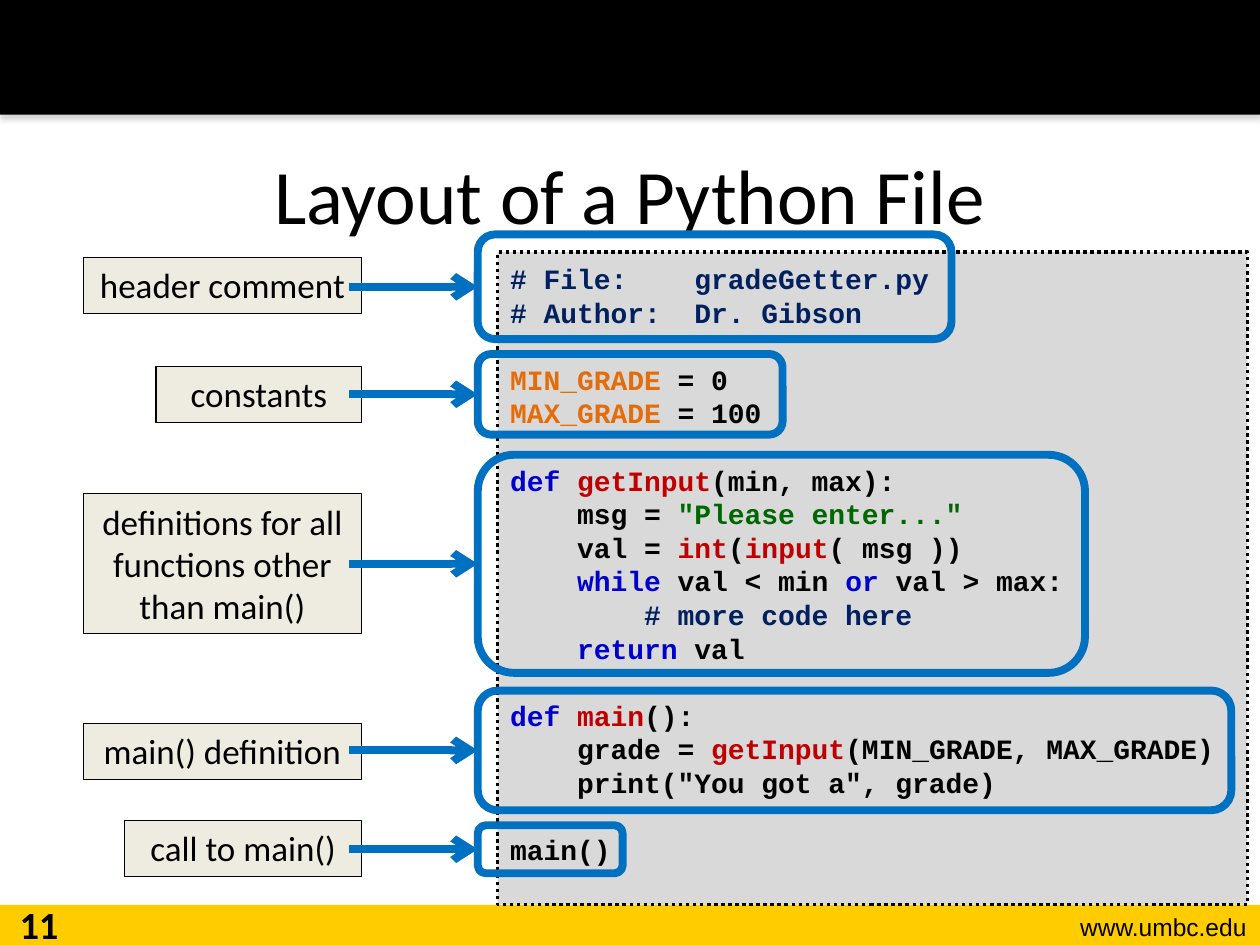
from lxml import etree
from pptx import Presentation
from pptx import util as u
from pptx.dml.color import RGBColor
from pptx.enum import dml, shapes, text
from pptx.oxml import ns

BLACK, NAVY, ORANGE = "000000", "002060", "E46C0A"
KEYWORD, CALL, STRING = "0000CC", "C00000", "006600"
ACCENT, LABEL_FILL = "0070C0", "EEECE1"
CODE_PITCH = 19.2

CODE = [
    [
        [("# File:    gradeGetter.py", NAVY)],
        [("# Author:  Dr. Gibson", NAVY)],
    ],
    [
        [("MIN_GRADE ", ORANGE), ("= 0", BLACK)],
        [("MAX_GRADE ", ORANGE), ("= 100", BLACK)],
    ],
    [
        [("def ", KEYWORD), ("getInput", CALL), ("(min, max):", BLACK)],
        [("    msg = ", BLACK), ('"Please enter..."', STRING)],
        [("    val = ", BLACK), ("int", CALL), ("(", BLACK),
         ("input", CALL), ("( msg ))", BLACK)],
        [("    while ", KEYWORD), ("val < min ", BLACK),
         ("or ", KEYWORD), ("val > max:", BLACK)],
        [("        # more code here", NAVY)],
        [("    return ", KEYWORD), ("val", BLACK)],
    ],
    [
        [("def ", KEYWORD), ("main", CALL), ("():", BLACK)],
        [("    grade = ", BLACK), ("getInput", CALL),
         ("(MIN_GRADE, MAX_GRADE)", BLACK)],
        [('    print("You got a", grade)', BLACK)],
    ],
    [
        [("main()", BLACK)],
    ],
]

SECTIONS = [
    ("header comment", (147, 159, 32), (134, 270.7, 59.8)),
    ("constants", (209.5, 117.4, 32), (202.3, 174.2, 46.1)),
    ("definitions for all functions other than main()",
     (282.2, 159, 80), (259.9, 347, 124.6)),
    ("main() definition", (413.3, 159, 32), (394.6, 430.6, 68.4)),
    ("call to main()", (468.7, 135.4, 32), (471.6, 82.8, 27.4)),
]
FRAME_LEFT, LABEL_RIGHT, ARROW_START = 273, 206.6, 199.5


def rgb(value):
    return RGBColor.from_string(value)


def apply(target, values):
    for name, value in values.items():
        setattr(target, name, value)


class SlideBuilder:
    title_font = {"name": "Calibri", "size": u.Pt(44)}
    label_font = {"name": "Calibri", "size": u.Pt(20)}
    number_font = {"name": "Calibri", "size": u.Pt(22), "bold": True}
    footer_font = {"name": "Arial", "size": u.Pt(14)}
    code_font = {"name": "Courier New", "size": u.Pt(16), "bold": True}

    def __init__(self, slide):
        self.slide = slide

    def add_words(self, paragraph, words, font, color=BLACK):
        run = paragraph.add_run()
        run.text = words
        apply(run.font, font)
        run.font.color.rgb = rgb(color)

    def title(self, words, box):
        title = self.slide.shapes.title
        apply(title, dict(zip(("left", "top", "width", "height"), map(u.Pt, box))))
        title.text_frame.vertical_anchor = text.MSO_ANCHOR.MIDDLE
        paragraph = title.text_frame.paragraphs[0]
        paragraph.alignment = text.PP_ALIGN.CENTER
        self.add_words(paragraph, words, self.title_font)

    def shape(self, box, fill=None, line=None, width=0.75, rounded=False):
        kind = shapes.MSO_SHAPE.ROUNDED_RECTANGLE if rounded else shapes.MSO_SHAPE.RECTANGLE
        shape = self.slide.shapes.add_shape(kind, *map(u.Pt, box))
        shape.shadow.inherit = False
        if fill:
            shape.fill.solid()
            shape.fill.fore_color.rgb = rgb(fill)
        else:
            shape.fill.background()
        if line:
            shape.line.color.rgb = rgb(line)
            shape.line.width = u.Pt(width)
        else:
            shape.line.fill.background()
        return shape

    def banner(self, box):
        banner = self.shape(box, BLACK)
        effects = banner._element.spPr.find(ns.qn("a:effectLst"))
        shadow = etree.SubElement(
            effects, ns.qn("a:outerShdw"), blurRad=str(u.Pt(3.1)),
            dist=str(u.Pt(1.8)), dir="5400000", rotWithShape="0")
        color = etree.SubElement(shadow, ns.qn("a:srgbClr"), val="808080")
        etree.SubElement(color, ns.qn("a:alpha"), val="35000")

    def textbox(self, words, box, font, alignment):
        frame = self.slide.shapes.add_textbox(*map(u.Pt, box)).text_frame
        frame.word_wrap = True
        paragraph = frame.paragraphs[0]
        paragraph.alignment = alignment
        self.add_words(paragraph, words, font)

    def label(self, words, box):
        frame = self.shape(box, LABEL_FILL, BLACK).text_frame
        apply(frame, {"word_wrap": True, "vertical_anchor": text.MSO_ANCHOR.TOP})
        paragraph = frame.paragraphs[0]
        paragraph.alignment = text.PP_ALIGN.CENTER
        self.add_words(paragraph, words, self.label_font)

    def arrow(self, start, middle, target):
        arrow = self.slide.shapes.add_connector(
            shapes.MSO_CONNECTOR.STRAIGHT, u.Pt(start), u.Pt(middle),
            target.left, u.Pt(middle))
        arrow.end_connect(target, 1)
        arrow.line.color.rgb = rgb(ACCENT)
        arrow.line.width = u.Pt(4.5)
        properties = arrow._element.spPr
        etree.SubElement(properties.find(ns.qn("a:ln")), ns.qn("a:tailEnd"), type="arrow")
        etree.SubElement(properties, ns.qn("a:effectLst"))

    def code(self, blocks, box):
        panel = self.shape(box, "D9D9D9", BLACK, 2)
        panel.line.dash_style = dml.MSO_LINE.ROUND_DOT
        frame = panel.text_frame
        apply(frame, {"word_wrap": True, "vertical_anchor": text.MSO_ANCHOR.TOP,
                      "margin_top": u.Pt(5.5)})
        paragraph = frame.paragraphs[0]
        for block_index, block in enumerate(blocks):
            for line_index, line in enumerate(block):
                if block_index or line_index:
                    paragraph = frame.add_paragraph()
                if block_index and not line_index:
                    paragraph.space_before = u.Pt(CODE_PITCH)
                apply(paragraph, {"alignment": text.PP_ALIGN.LEFT,
                                  "line_spacing": u.Pt(CODE_PITCH)})
                for words, color in line:
                    self.add_words(paragraph, words, self.code_font, color)


def main():
    deck = Presentation()
    apply(deck, {"slide_width": u.Pt(720), "slide_height": u.Pt(540)})
    builder = SlideBuilder(deck.slides.add_slide(deck.slide_layouts[5]))
    builder.shape((0, 517, 720, 23), "FFCC00")
    builder.banner((0, 0, 720, 65.5))
    builder.textbox("www.umbc.edu", (576, 517.7, 143.5, 24),
                    builder.footer_font, text.PP_ALIGN.RIGHT)
    builder.title("Layout of a Python File", (36, 65.5, 648, 90))
    builder.textbox("11", (0, 511.2, 44.6, 28.8),
                    builder.number_font, text.PP_ALIGN.CENTER)
    builder.code(CODE, (284.4, 144, 428.4, 373))
    for words, (label_top, label_width, label_height), (top, width, height) in SECTIONS:
        frame = builder.shape((FRAME_LEFT, top, width, height),
                              line=ACCENT, width=4.5, rounded=True)
        builder.label(words, (LABEL_RIGHT - label_width, label_top,
                              label_width, label_height))
        builder.arrow(ARROW_START, top + height / 2, frame)
    deck.save("out.pptx")


if __name__ == "__main__":
    main()
